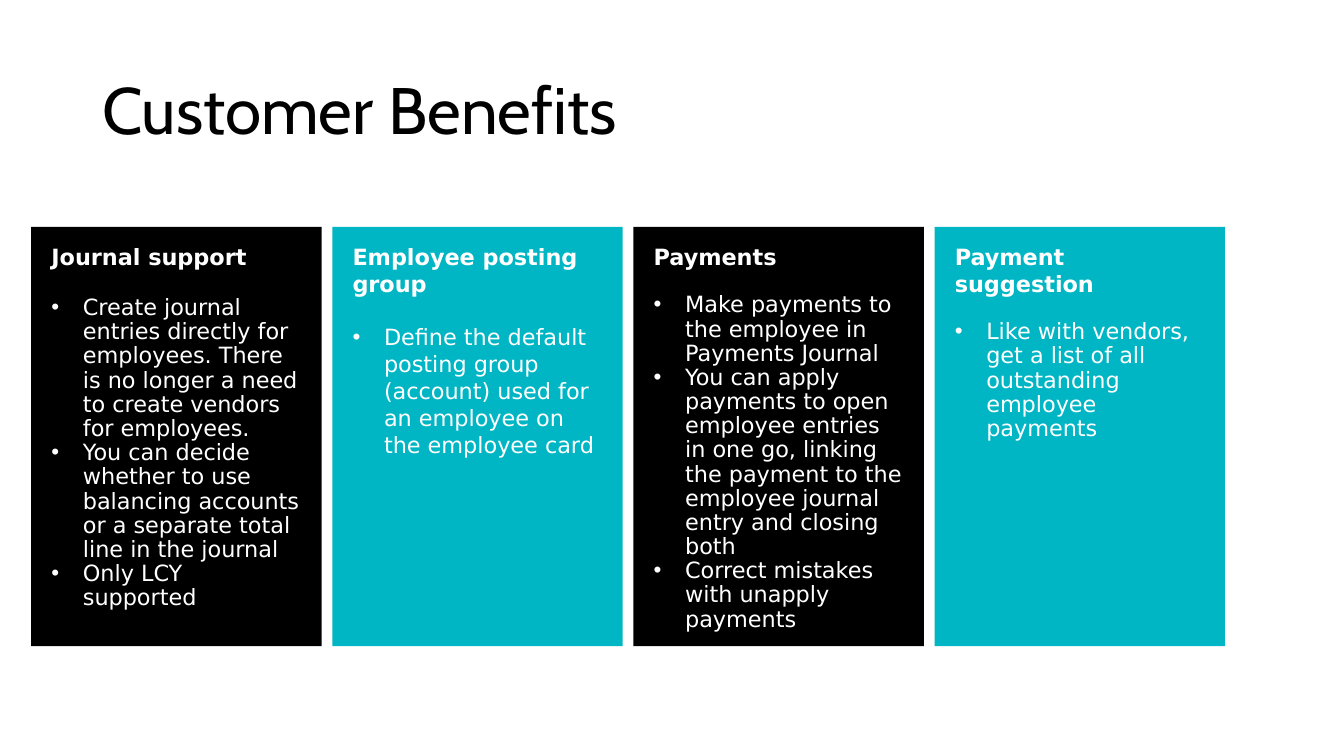
"""Build the Customer Benefits slide with four benefit cards."""
from dataclasses import dataclass

from lxml import etree
from pptx import Presentation
from pptx.dml.color import RGBColor
from pptx.enum.shapes import MSO_SHAPE
from pptx.enum.text import MSO_ANCHOR, PP_ALIGN
from pptx.oxml.ns import qn
from pptx.util import Pt

RECTANGLE = MSO_SHAPE.RECTANGLE
TOP = MSO_ANCHOR.TOP
MIDDLE = MSO_ANCHOR.MIDDLE
LEFT = PP_ALIGN.LEFT

BLACK = RGBColor(0x00, 0x00, 0x00)
TEAL = RGBColor(0x00, 0xB6, 0xC4)
WHITE = RGBColor(0xFF, 0xFF, 0xFF)

TITLE_FONT = "Cabin"
BODY_FONT = "DejaVu Sans"
CARD_LEFT, CARD_TOP = 22.3, 162
CARD_WIDTH, CARD_HEIGHT = 207.4, 299.5
CARD_PITCH = 215.1
BULLET_INDENT = 22.5


@dataclass
class Card:
    heading: str
    bullets: list[str]
    fill: RGBColor
    heading_gap: float
    line_spacing: float = 0.9


CARDS = [
    Card("Journal support", [
        "Create journal entries directly for employees. There is no longer "
        "a need to create vendors for employees.",
        "You can decide whether to use balancing accounts or a separate "
        "total line in the journal",
        "Only LCY supported",
    ], BLACK, 19),
    Card("Employee posting group", [
        "Define the default posting group (account) used for an employee "
        "on the employee card",
    ], TEAL, 19, 1.0),
    Card("Payments", [
        "Make payments to the employee in Payments Journal",
        "You can apply payments to open employee entries in one go, linking "
        "the payment to the employee journal entry and closing both",
        "Correct mistakes with unapply payments",
    ], BLACK, 17),
    Card("Payment suggestion", [
        "Like with vendors, get a list of all outstanding employee payments",
    ], TEAL, 17),
]


def style_paragraph(para, font: str, size: float, color: RGBColor,
                    bold: bool = False) -> None:
    para.alignment = LEFT
    for span in para.runs:
        span.font.name = font
        span.font.size = Pt(size)
        span.font.bold = bold
        span.font.color.rgb = color


def add_bullet(para) -> None:
    properties = para._p.get_or_add_pPr()
    properties.set("marL", str(Pt(BULLET_INDENT)))
    properties.set("indent", str(-Pt(BULLET_INDENT)))
    etree.SubElement(properties, qn("a:buFont")).set("typeface", "Arial")
    etree.SubElement(properties, qn("a:buChar")).set("char", "•")


def add_title(page, text: str) -> None:
    box = page.shapes.add_textbox(Pt(66), Pt(28.8), Pt(828), Pt(104.4))
    frame = box.text_frame
    frame.word_wrap = True
    frame.vertical_anchor = MIDDLE
    frame.text = text
    para = frame.paragraphs[0]
    para.line_spacing = 0.9
    style_paragraph(para, TITLE_FONT, 46.9, BLACK)


def add_card(page, card: Card, left: float) -> None:
    box = page.shapes.add_shape(RECTANGLE, Pt(left), Pt(CARD_TOP),
                                Pt(CARD_WIDTH), Pt(CARD_HEIGHT))
    box.shadow.inherit = False
    box.fill.solid()
    box.fill.fore_color.rgb = card.fill
    box.line.fill.background()
    frame = box.text_frame
    frame.word_wrap = True
    frame.vertical_anchor = TOP
    frame.margin_left = frame.margin_right = Pt(14.4)
    frame.margin_top = frame.margin_bottom = Pt(11.5)
    frame.text = card.heading
    style_paragraph(frame.paragraphs[0], BODY_FONT, 16, WHITE, bold=True)
    for index, text in enumerate(card.bullets):
        para = frame.add_paragraph()
        para.text = text
        add_bullet(para)
        para.line_spacing = card.line_spacing
        para.space_before = Pt(0 if index else card.heading_gap)
        style_paragraph(para, BODY_FONT, 16, WHITE)


def main() -> None:
    deck = Presentation()
    deck.slide_width, deck.slide_height = Pt(960), Pt(540)
    page = deck.slides.add_slide(deck.slide_layouts[6])
    add_title(page, "Customer Benefits")
    for index, card in enumerate(CARDS):
        add_card(page, card, CARD_LEFT + index * CARD_PITCH)
    deck.save("out.pptx")


if __name__ == "__main__":
    main()
